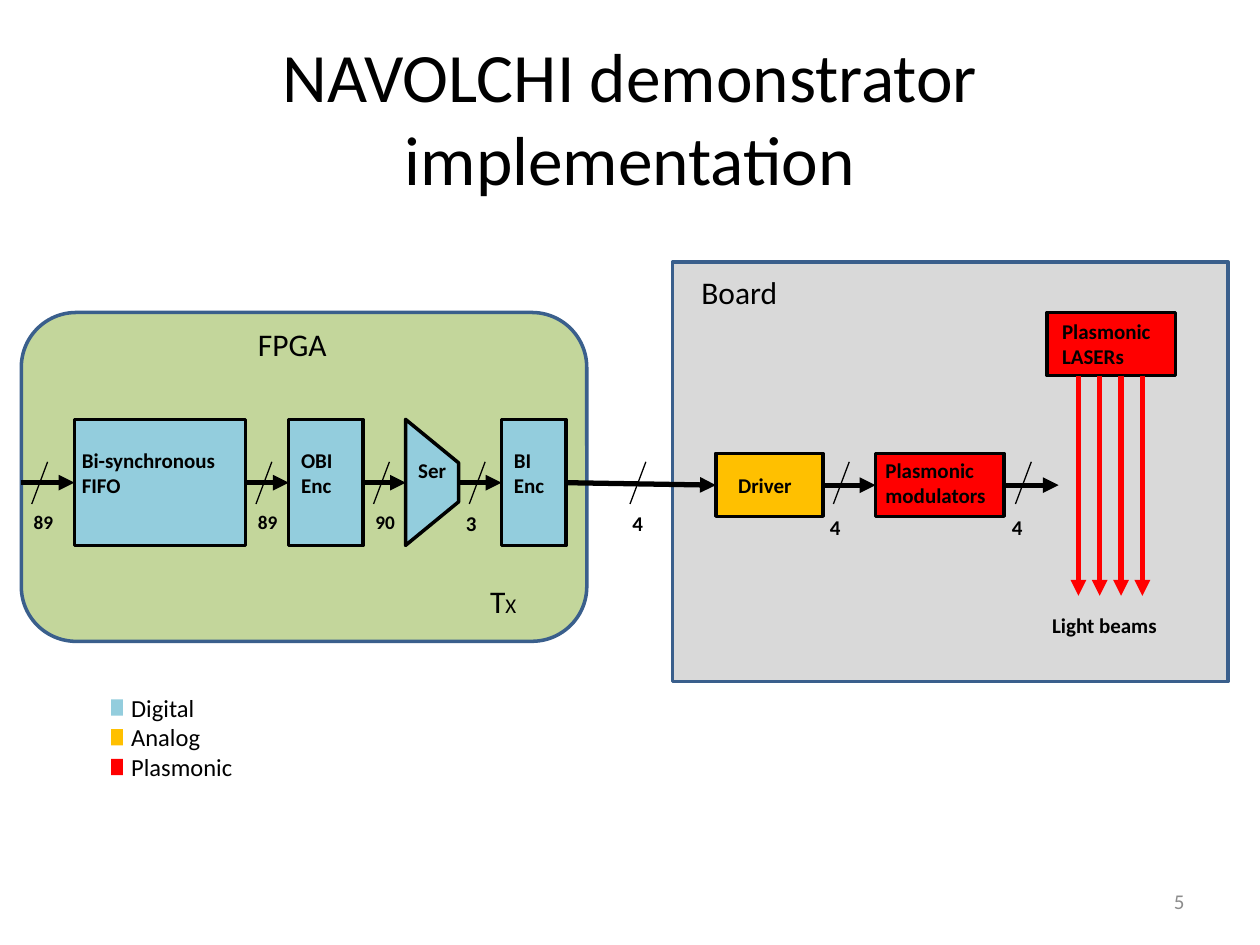
"""Build the demonstrator block diagram slide."""
from lxml.etree import SubElement
from pptx import Presentation
from pptx.dml.color import RGBColor
from pptx.enum.shapes import MSO_CONNECTOR, MSO_SHAPE
from pptx.enum.text import MSO_ANCHOR, MSO_AUTO_SIZE, PP_ALIGN
from pptx.oxml.ns import qn
from pptx.util import Cm, Pt

COLORS = {
    "digital": "93CDDD", "analog": "FFC000", "plasmonic": "FF0000",
    "fpga": "C3D69B", "board": "D9D9D9", "border": "3A5F8C",
    "ink": "000000", "number": "8C8C8C",
}
BUS_Y, BOARD_BUS_Y = 9.73, 9.78
SLASH_BOTTOM, SLASH_TOP, SLASH_RUN = 10.16, 9.31, 0.32


class Diagram:
    """Hold the style and the current slide."""

    font_format = {"name": "Calibri", "bold": False, "italic": False}

    def __init__(self, slide):
        self.slide = slide

    def color(self, name):
        return RGBColor.from_string(COLORS[name])

    def style_font(self, font, size, color="ink", **changes):
        values = {**self.font_format, "size": Pt(size), **changes}
        for attribute, value in values.items():
            setattr(font, attribute, value)
        font.color.rgb = self.color(color)

    def fill_frame(self, frame, text, size, color="ink", align=PP_ALIGN.LEFT,
                   anchor=MSO_ANCHOR.TOP, bold=False):
        frame.text = text
        frame_format = {"word_wrap": True, "auto_size": MSO_AUTO_SIZE.NONE,
                        "vertical_anchor": anchor}
        for attribute, value in frame_format.items():
            setattr(frame, attribute, value)
        for paragraph in frame.paragraphs:
            paragraph.alignment = align
            paragraph.space_before = Pt(0)
            for run in paragraph.runs:
                self.style_font(run.font, size, color, bold=bold)

    def place(self, placeholder, left, top, width, height):
        box = {"left": left, "top": top, "width": width, "height": height}
        for attribute, value in box.items():
            setattr(placeholder, attribute, Cm(value))

    def title(self, text, box):
        heading = self.slide.shapes.title
        self.place(heading, *box)
        self.fill_frame(heading.text_frame, text, 39.6,
                        align=PP_ALIGN.CENTER, anchor=MSO_ANCHOR.MIDDLE)

    def legend(self, entries, box):
        body = self.slide.placeholders[1]
        self.place(body, *box)
        self.fill_frame(body.text_frame, "\n".join(entries), 14)
        for paragraph in body.text_frame.paragraphs:
            properties = paragraph._p.get_or_add_pPr()
            properties.set("marL", "0")
            properties.set("indent", "0")
            SubElement(properties, qn("a:buNone"))

    def label(self, text, box, size=12, bold=True, **options):
        label = self.slide.shapes.add_textbox(*map(Cm, box))
        self.fill_frame(label.text_frame, text, size, bold=bold, **options)
        return label

    def block(self, fill, box, border="ink", kind=MSO_SHAPE.RECTANGLE):
        block = self.slide.shapes.add_shape(kind, *map(Cm, box))
        block.shadow.inherit = False
        block.fill.solid()
        block.fill.fore_color.rgb = self.color(fill)
        if border:
            block.line.color.rgb = self.color(border)
            block.line.width = Pt(2)
        else:
            block.line.fill.background()
        return block

    def wire(self, start, end, color="ink", width=3, arrow=True):
        wire = self.slide.shapes.add_connector(
            MSO_CONNECTOR.STRAIGHT, *map(Cm, (*start, *end)))
        wire.line.color.rgb = self.color(color)
        wire.line.width = Pt(width)
        if arrow:
            SubElement(wire.get_or_add_ln(), qn("a:tailEnd"), type="triangle")
        SubElement(wire._element.spPr, qn("a:effectLst"))

    def bus(self, start, end, slash, lanes, label_at, size):
        self.wire(start, end)
        self.wire((slash, SLASH_BOTTOM), (slash + SLASH_RUN, SLASH_TOP),
                  width=0.75, arrow=False)
        self.label(lanes, (*label_at, 0.97, 0.76), size)


def main():
    deck = Presentation()
    deck.slide_width, deck.slide_height = Cm(25.4), Cm(19.05)
    diagram = Diagram(deck.slides.add_slide(deck.slide_layouts[1]))

    diagram.title("NAVOLCHI demonstrator implementation",
                  (1.27, 0.76, 22.86, 3.18))
    diagram.legend(["Digital", "Analog", "Plasmonic"],
                   (2.39, 13.84, 2.95, 2.06))
    for row, kind in enumerate(("digital", "analog", "plasmonic")):
        diagram.block(kind, (2.24, 14.1 + 0.6 * row, 0.24, 0.33), border=None)

    diagram.block("fpga", (0.43, 6.3, 11.4, 6.63), "border",
                  MSO_SHAPE.ROUNDED_RECTANGLE)
    diagram.block("board", (13.56, 5.28, 11.2, 8.46), "border")
    serializer = diagram.block("digital", (7.44, 9.19, 2.54, 1.07),
                               kind=MSO_SHAPE.TRAPEZOID)
    serializer.rotation = 90
    serializer.adjustments[0] = 0.82

    for left, width in ((1.5, 3.45), (5.82, 1.5), (10.11, 1.3)):
        diagram.block("digital", (left, 8.46, width, 2.54))
    for fill, box in (
        ("analog", (14.43, 9.14, 2.16, 1.27)),
        ("plasmonic", (17.65, 9.14, 2.59, 1.27)),
        ("plasmonic", (21.11, 6.3, 2.59, 1.27)),
    ):
        diagram.block(fill, box)

    for start, end, y, lanes, size, label_shift, label_top in (
        (0.43, 1.5, BUS_Y, "89", 11, 0, 10.16),
        (4.95, 5.82, BUS_Y, "89", 11, 0, 10.16),
        (7.32, 8.18, BUS_Y, "90", 11, 0, 10.16),
        (9.25, 10.11, BUS_Y, "3", 12, -0.11, 10.16),
        (16.59, 17.65, BOARD_BUS_Y, "4", 12, -0.11, 10.24),
        (20.26, 21.34, BOARD_BUS_Y, "4", 12, -0.11, 10.24),
    ):
        diagram.bus((start, y), (end, y), start + 0.21, lanes,
                    (start + label_shift, label_top), size)
    diagram.bus((11.4, BUS_Y), (14.43, BOARD_BUS_Y), 12.7, "4",
                (12.5, 10.16), 12)

    for beam in range(4):
        x = 21.74 + 0.43 * beam
        diagram.wire((x, 7.57), (x, 12.01), "plasmonic")

    for text, box in (
        ("Bi-synchronous FIFO", (1.4, 8.89, 3.66, 1.27)),
        ("OBI Enc", (5.82, 8.89, 1.3, 1.27)),
        ("Ser", (8.18, 9.09, 1.3, 0.76)),
        ("BI\nEnc", (10.11, 8.89, 1.3, 1.27)),
        ("Driver", (14.63, 9.4, 1.8, 0.76)),
        ("Plasmonic modulators", (17.6, 9.09, 2.87, 1.27)),
        ("Plasmonic LASERs", (21.16, 6.3, 2.77, 1.27)),
        ("Light beams", (20.96, 12.22, 3.02, 0.76)),
    ):
        diagram.label(text, box)
    for text, left, top in (("FPGA", 4.95, 6.43), ("Board", 13.89, 5.38)):
        diagram.label(text, (left, top, 2.36, 1.02), 18, bold=False)

    transmitter = diagram.label("T", (9.63, 11.61, 1.3, 1.02), 18, bold=False)
    subscript = transmitter.text_frame.paragraphs[0].add_run()
    subscript.text = "X"
    diagram.style_font(subscript.font, 12)

    diagram.label("5", (18.21, 17.65, 5.92, 1.02), bold=False, color="number",
                  align=PP_ALIGN.RIGHT, anchor=MSO_ANCHOR.MIDDLE)
    deck.save("out.pptx")


if __name__ == "__main__":
    main()
